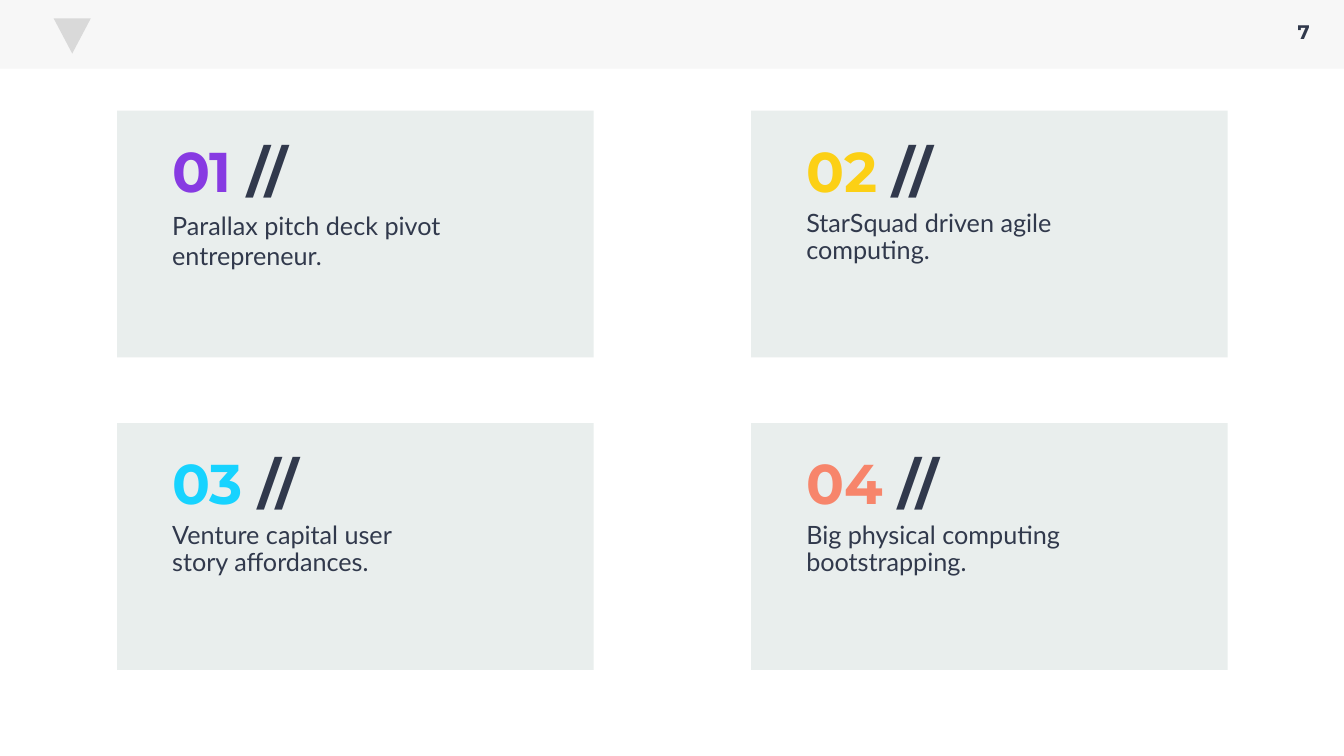
import pptx
import pptx.dml.color
import pptx.enum.shapes
import pptx.enum.text
import pptx.oxml.ns
import pptx.util
from lxml import etree

Cm, Pt = pptx.util.Cm, pptx.util.Pt
RGBColor = pptx.dml.color.RGBColor
SHAPE = pptx.enum.shapes.MSO_SHAPE
ALIGN = pptx.enum.text.PP_ALIGN
ANCHOR = pptx.enum.text.MSO_ANCHOR

INK = RGBColor(0x31, 0x39, 0x4C)
HEADER = RGBColor(0xF7, 0xF7, 0xF7)
MARK = RGBColor(0xD9, 0xD9, 0xD9)
CARD = RGBColor(0xE4, 0xEA, 0xE9)
PURPLE = RGBColor(0x87, 0x3A, 0xE2)
YELLOW = RGBColor(0xFC, 0xD0, 0x15)
CYAN = RGBColor(0x17, 0xD3, 0xFF)
CORAL = RGBColor(0xF7, 0x85, 0x6B)

HEADING = {"name": "Montserrat", "size": Pt(40), "bold": True}
BODY = {"name": "Lato", "size": Pt(18)}
PAGE = {"name": "Montserrat", "size": Pt(14), "bold": True}

# Number colour, text and line spacing of each card, row by row
CARDS = [
    (PURPLE, "Parallax pitch deck pivot entrepreneur.", 1.0),
    (YELLOW, "StarSquad driven agile computing.", 0.9),
    (CYAN, "Venture capital user story affordances.", 0.9),
    (CORAL, "Big physical computing bootstrapping.", 0.9),
]
COLUMNS = 2
LEFT, TOP = 2.95, 2.79
COLUMN_STEP, ROW_STEP = 15.98, 7.87
CARD_WIDTH, CARD_HEIGHT = 12.01, 6.22


def add_block(s, kind, box, color, opacity=100):
    sp = s.shapes.add_shape(kind, *map(Cm, box))
    sp.shadow.inherit = False
    sp.fill.solid()
    sp.fill.fore_color.rgb = color
    sp.line.fill.background()
    if opacity < 100:
        qn = pptx.oxml.ns.qn
        clr = sp.fill._xPr.find(qn("a:solidFill")).find(qn("a:srgbClr"))
        etree.SubElement(clr, qn("a:alpha")).set("val", str(opacity * 1000))
    return sp


def add_text(shapes, box, runs, font, paragraph, anchor=ANCHOR.TOP):
    tf = shapes.add_textbox(*map(Cm, box)).text_frame
    tf.word_wrap = True
    tf.vertical_anchor = anchor
    p = tf.paragraphs[0]
    for key, value in paragraph.items():
        setattr(p, key, value)
    for text, color in runs:
        r = p.add_run()
        r.text = text
        r.font.color.rgb = color
        for key, value in font.items():
            setattr(r.font, key, value)


def add_card(s, index, color, text, spacing):
    row, column = divmod(index, COLUMNS)
    x, y = LEFT + column * COLUMN_STEP, TOP + row * ROW_STEP
    add_block(s, SHAPE.RECTANGLE, (x, y, CARD_WIDTH, CARD_HEIGHT), CARD, 80)
    group = s.shapes.add_group_shape()
    add_text(group.shapes, (x + 1.14, y + 2.39, 7.52, 1.12), [(text, INK)],
             BODY, {"space_before": Pt(10), "line_spacing": spacing})
    add_text(group.shapes, (x + 1.14, y + 0.94, 4.09, 1.12),
             [(f"{index + 1:02d}", color), (" //", INK)],
             HEADING, {"space_before": Pt(10)}, ANCHOR.MIDDLE)


def main():
    prs = pptx.Presentation()
    prs.slide_width, prs.slide_height = Cm(33.87), Cm(19.05)
    s = prs.slides.add_slide(prs.slide_layouts[6])

    # Header band with a plain mark and the page number
    add_block(s, SHAPE.RECTANGLE, (0, 0, 33.87, 1.73), HEADER)
    mark = add_block(s, SHAPE.ISOSCELES_TRIANGLE, (1.35, 0.46, 0.94, 0.89), MARK)
    mark.rotation = 180
    add_text(s.shapes, (32.26, 0.38, 1.19, 0.74), [("7", INK)],
             PAGE, {"alignment": ALIGN.CENTER})

    # Numbered cards
    for index, card in enumerate(CARDS):
        add_card(s, index, *card)

    prs.save("out.pptx")


if __name__ == "__main__":
    main()
